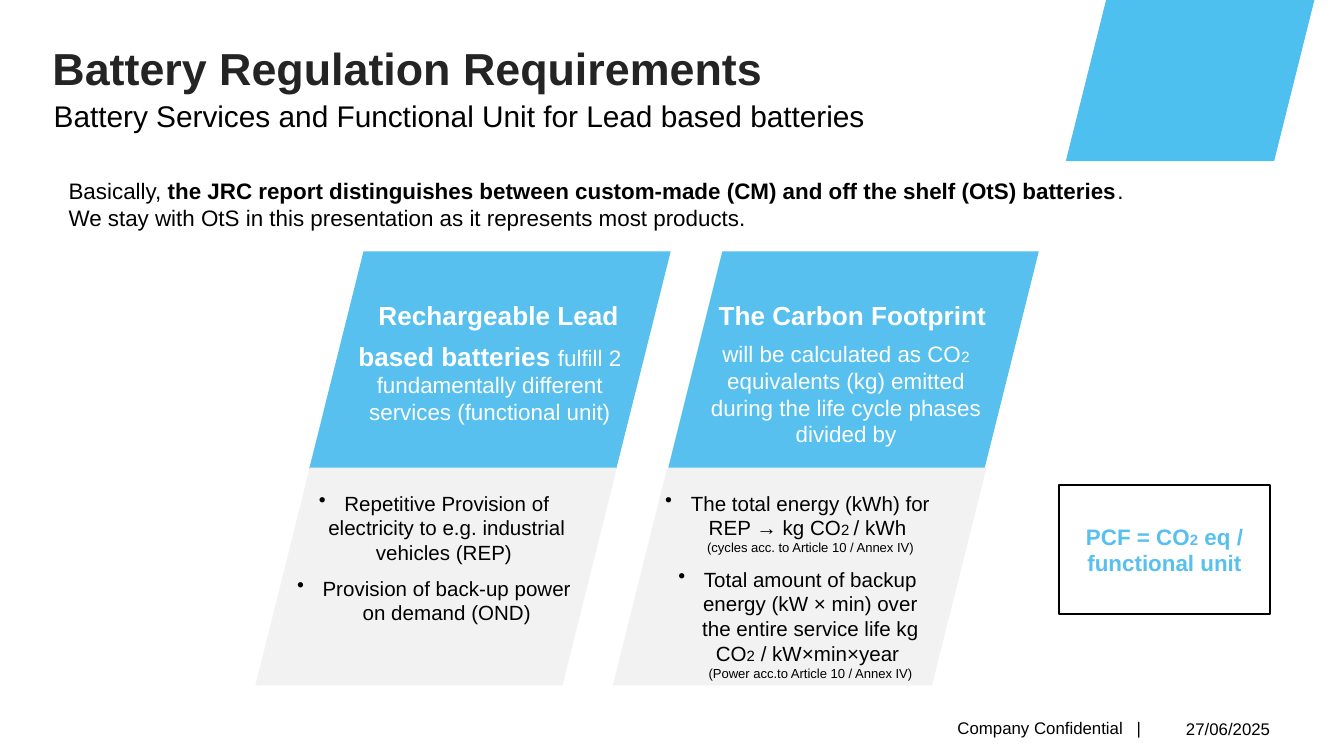
from dataclasses import dataclass

from lxml import etree
from pptx import Presentation
from pptx import util as u
from pptx.dml.color import RGBColor
from pptx.enum import shapes, text
from pptx.oxml import ns


@dataclass(frozen=True)
class Theme:
    font: str = "Arial"
    black: str = "000000"
    heading: str = "242424"
    white: str = "FFFFFF"
    corner: str = "4EC0EF"
    blue: str = "57C0EF"
    grey: str = "F2F2F2"
    title: int = 24
    subtitle: int = 16
    lead: int = 14
    body: int = 12
    bullet: int = 11
    footer: int = 9
    sub: int = 8
    note: int = 7


theme = Theme()
LEFT, CENTER, RIGHT = text.PP_ALIGN.LEFT, text.PP_ALIGN.CENTER, text.PP_ALIGN.RIGHT
TOP, BOTTOM = text.MSO_ANCHOR.TOP, text.MSO_ANCHOR.BOTTOM


def write(shape, paragraphs, color=theme.black, align=LEFT, anchor=TOP,
          insets=(0, 0, 0, 0), spacing=None, gap=0, bullets=False):
    """Fill a shape with paragraphs of (text, size, bold) runs; "\n" breaks the line."""
    frame = shape.text_frame
    frame.word_wrap = True
    frame.vertical_anchor = anchor
    frame.margin_left, frame.margin_top, frame.margin_right, frame.margin_bottom = map(u.Inches, insets)
    for i, runs in enumerate(paragraphs):
        paragraph = frame.paragraphs[0] if i == 0 else frame.add_paragraph()
        paragraph.alignment = align
        if spacing:
            paragraph.line_spacing = spacing
        paragraph.space_before = u.Pt(gap if i else 0)
        paragraph.space_after = u.Pt(gap)
        if bullets:
            properties = paragraph._p.get_or_add_pPr()
            properties.set("marL", str(u.Inches(0.19)))
            properties.set("indent", str(-u.Inches(0.19)))
            etree.SubElement(properties, ns.qn("a:buChar"), char="•")
        for content, size, bold in runs:
            if content == "\n":
                paragraph.add_line_break()
                etree.SubElement(paragraph._p[-1], ns.qn("a:rPr"), sz=str(size * 100))
                continue
            run = paragraph.add_run()
            run.text = content
            run.font.name = theme.font
            run.font.size = u.Pt(size)
            run.font.bold = bold
            run.font.color.rgb = RGBColor.from_string(color)


def add_panel(parent, kind, box, fill=None):
    """Add a flat preset shape without an outline."""
    panel = parent.add_shape(kind, *map(u.Inches, box))
    panel.shadow.inherit = False
    panel.line.fill.background()
    if fill:
        panel.fill.solid()
        panel.fill.fore_color.rgb = RGBColor.from_string(fill)
    else:
        panel.fill.background()
    return panel


presentation = Presentation()
presentation.slide_width = u.Inches(10)
presentation.slide_height = u.Inches(10 * 9 / 16)
slide = presentation.slides.add_slide(presentation.slide_layouts[6])
SLANTED = shapes.MSO_SHAPE.PARALLELOGRAM

# Footer: one widened space sets the divider apart
confidential = slide.shapes.add_textbox(*map(u.Inches, (5.12, 5.33, 3.37, 0.16)))
write(confidential, [[("Company Confidential", theme.footer, False), (" ", theme.footer, False),
                      ("|", theme.footer, False)]], align=RIGHT, anchor=BOTTOM, spacing=0.8)
divider_space = confidential.text_frame.paragraphs[0].runs[1]
divider_space.font._element.set("spc", "500")
date = slide.shapes.add_textbox(*map(u.Inches, (8.39, 5.3, 1.06, 0.2)))
write(date, [[("27/06/2025", theme.footer, False)]], align=RIGHT, anchor=BOTTOM, spacing=0.8)

# Heading
title = slide.shapes.add_textbox(*map(u.Inches, (0.39, 0.25, 9.21, 0.45)))
write(title, [[("Battery Regulation Requirements", theme.title, True)]],
      color=theme.heading, anchor=BOTTOM, insets=(0, 0.04, 0, 0))
subtitle = slide.shapes.add_textbox(*map(u.Inches, (0.4, 0.78, 8.46, 0.25)))
write(subtitle, [[("Battery Services and Functional Unit for Lead based batteries", theme.subtitle, False)]],
      spacing=0.8)

# Introduction
introduction = slide.shapes.add_textbox(*map(u.Inches, (0.39, 1.2, 8.35, 0.59)))
write(introduction, [
    [("Basically, ", theme.body, False),
     ("the JRC report distinguishes between custom-made (CM) and off the shelf (OtS) batteries",
      theme.body, True),
     (".", theme.body, False)],
    [("We stay with OtS in this presentation as it represents most products.", theme.body, False)],
], insets=(0.12, 0.12, 0.08, 0.08))

# Corner decoration
add_panel(slide.shapes, SLANTED, (7.93, 0, 1.85, 1.2), theme.corner)

# Two columns: (left, width) of each part, then its wording
columns = [
    dict(
        head=(2.3, 2.69), base=(1.9, 2.69), lead=(2.62, 2.18), summary=(2.52, 2.25), points=(2.21, 2.04),
        lead_runs=[("Rechargeable Lead", theme.lead, True)],
        summary_runs=[("based batteries ", theme.lead, True),
                      ("fulfill 2 fundamentally different services (functional unit)", theme.body, False)],
        point_runs=[
            [("Repetitive Provision of electricity to e.g. industrial vehicles (REP) ", theme.bullet, False)],
            [("Provision of back-up power on demand (OND)", theme.bullet, False)],
        ],
    ),
    dict(
        head=(4.97, 2.76), base=(4.56, 2.78), lead=(5.28, 2.18), summary=(5.17, 2.25), points=(4.93, 2.01),
        lead_runs=[("The Carbon Footprint ", theme.lead, True)],
        summary_runs=[("will be calculated as CO", theme.body, False), ("2", theme.sub, False),
                      (" equivalents (kg) emitted during the life cycle phases divided by", theme.body, False)],
        point_runs=[
            [("The total energy (kWh) for REP → kg CO", theme.bullet, False), ("2 ", theme.sub, False),
             ("/ kWh ", theme.bullet, False), ("\n", theme.bullet, False),
             ("(cycles acc. to Article 10 / Annex IV)", theme.note, False)],
            [("Total amount of backup energy (kW × min) over the entire service life kg CO", theme.bullet, False),
             ("2", theme.sub, False), (" / kW×min×year ", theme.bullet, False), ("\n", theme.bullet, False),
             ("(Power acc.to Article 10 / Annex IV)", theme.note, False)],
        ],
    ),
]
service_group = slide.shapes.add_group_shape()
for column in columns:
    for part, top, fill in (("head", 1.87, theme.blue), ("base", 3.48, theme.grey)):
        left, width = column[part]
        add_panel(service_group.shapes, SLANTED, (left, top, width, 1.62), fill)
    for part, top, height, paragraphs, color in (
        ("lead", 2.23, 0.29, [column["lead_runs"]], theme.white),
        ("summary", 2.53, 0.77, [column["summary_runs"]], theme.white),
        ("points", 3.65, 1.27, column["point_runs"], theme.black),
    ):
        left, width = column[part]
        wording = service_group.shapes.add_textbox(*map(u.Inches, (left, top, width, height)))
        write(wording, paragraphs, color=color, align=CENTER, gap=3, bullets=part == "points")

# Resulting formula
formula = add_panel(slide.shapes, shapes.MSO_SHAPE.RECTANGLE, (7.88, 3.61, 1.57, 0.96))
formula.line.color.rgb = RGBColor.from_string(theme.black)
formula.line.width = u.Pt(0.75)
write(formula, [[("PCF = CO", theme.body, True), ("2", theme.sub, True),
                 (" eq / functional unit", theme.body, True)]],
      color=theme.blue, align=CENTER, insets=(0, 0.28, 0, 0), gap=3)

presentation.save("out.pptx")
